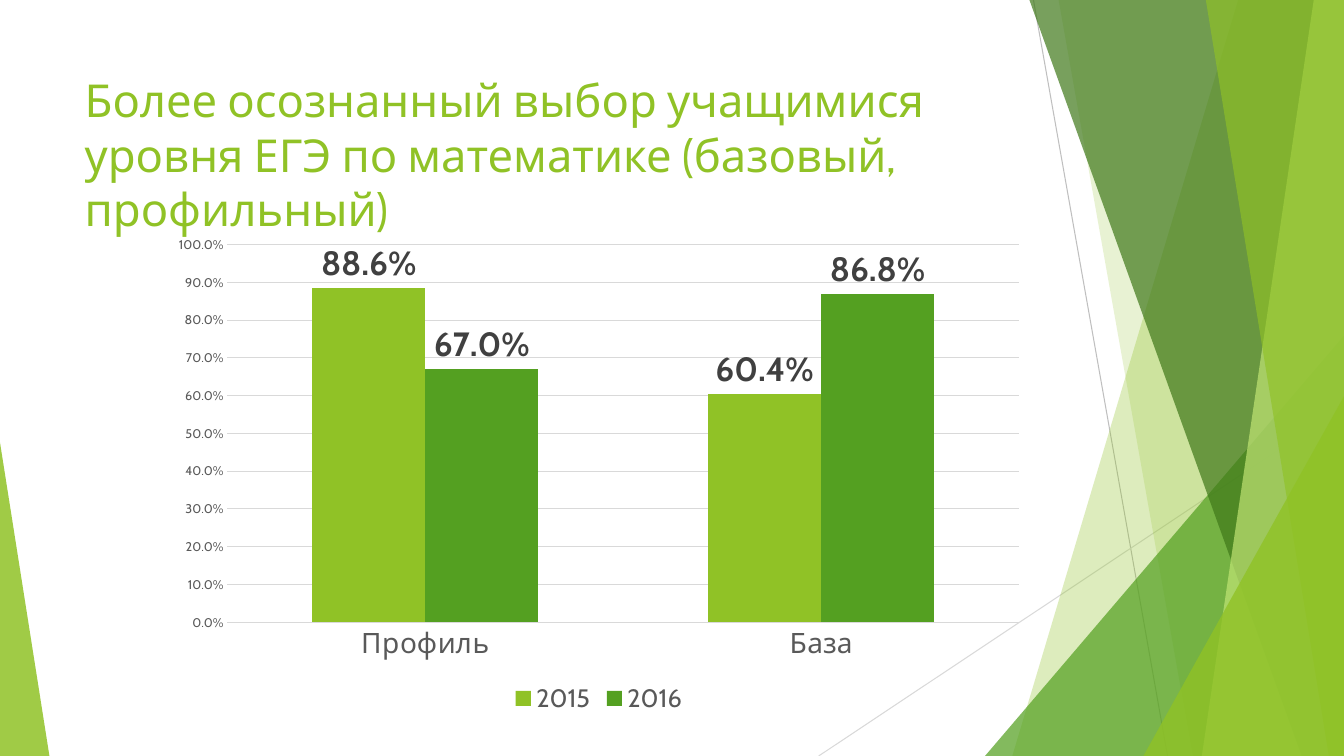
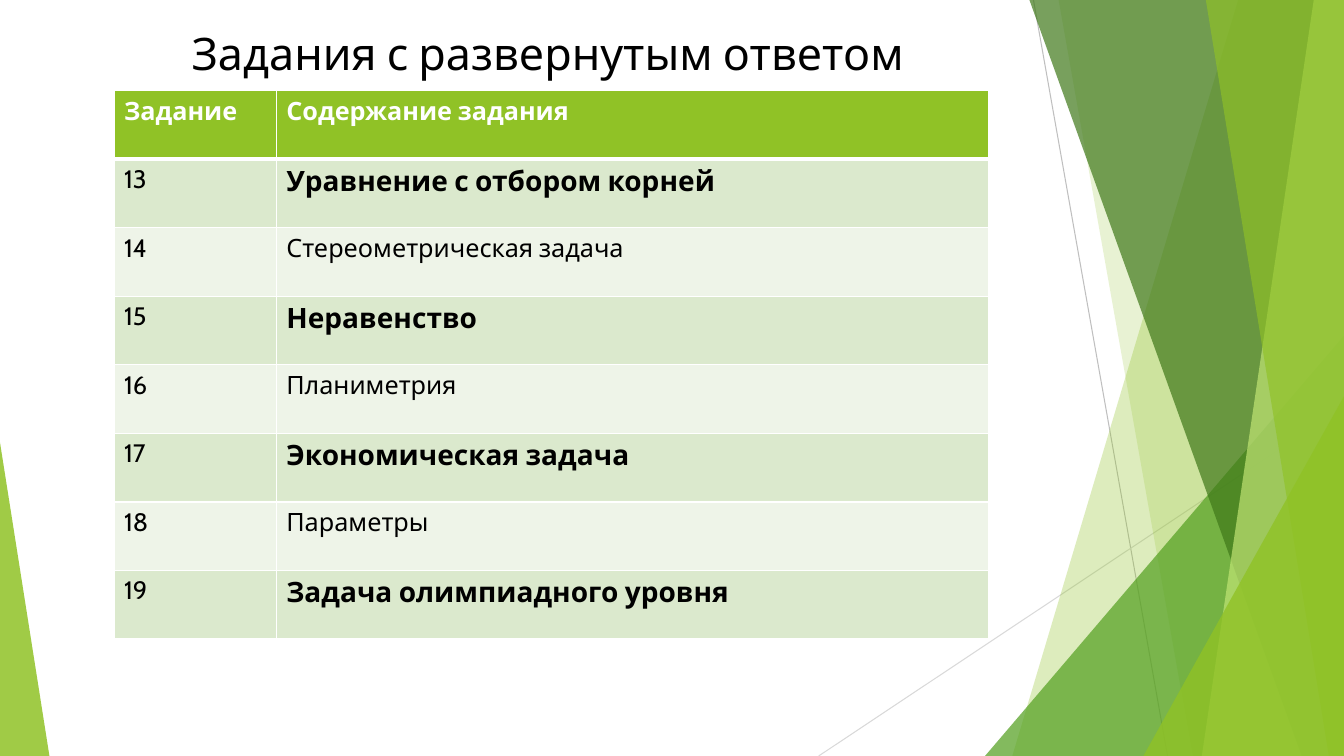
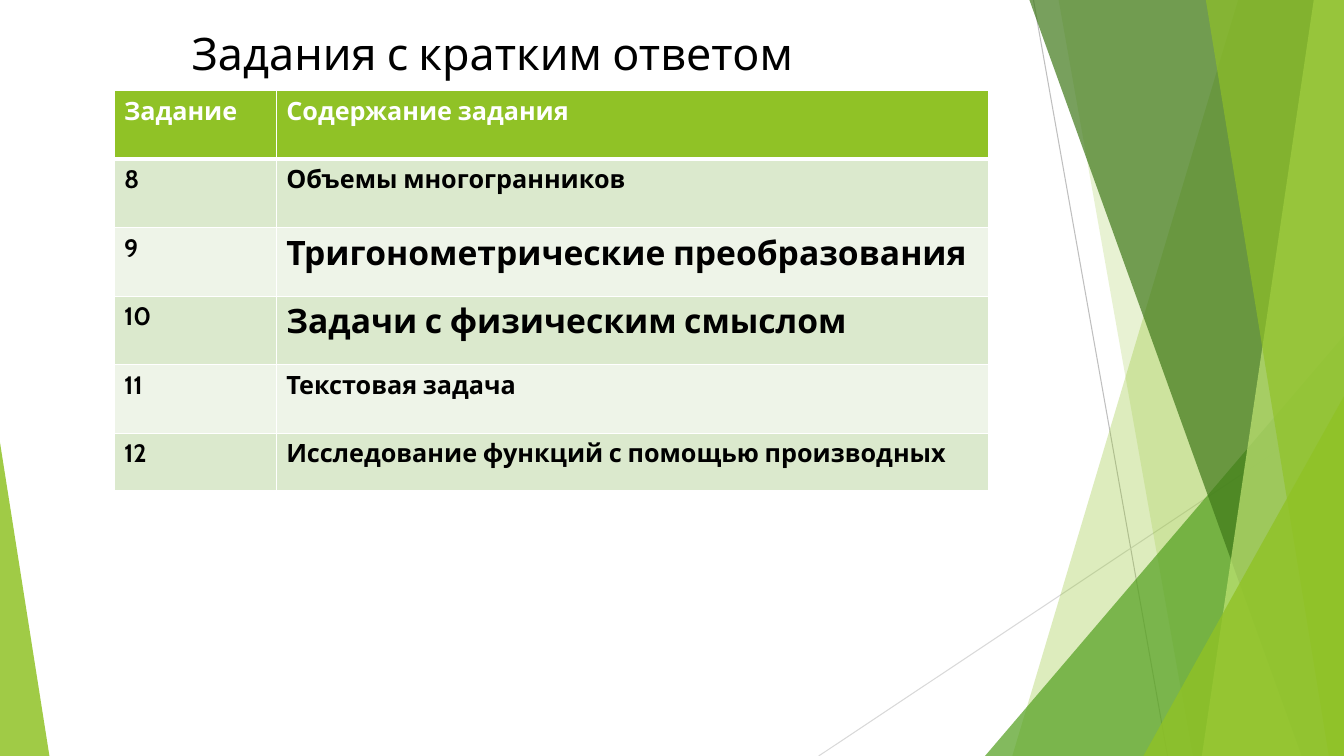
"""Build three slides on the results and tasks of the mathematics exam."""
from lxml.etree import SubElement
from pptx import Presentation
from pptx.chart.data import CategoryChartData
from pptx.dml.color import RGBColor
from pptx.enum.chart import XL_CHART_TYPE, XL_LABEL_POSITION, XL_LEGEND_POSITION, XL_TICK_MARK
from pptx.enum.shapes import MSO_CONNECTOR, MSO_SHAPE
from pptx.enum.text import MSO_ANCHOR, MSO_AUTO_SIZE, PP_ALIGN
from pptx.oxml.ns import qn
from pptx.util import Inches, Pt

LIME = RGBColor(0x90, 0xC2, 0x26)
GREEN = RGBColor(0x54, 0xA0, 0x21)
DARK_GREEN = RGBColor(0x3F, 0x78, 0x19)
PALE_LIME = RGBColor(0xC0, 0xE4, 0x74)
ROW_DARK = RGBColor(0xDB, 0xE9, 0xCD)
ROW_LIGHT = RGBColor(0xEE, 0xF4, 0xE8)
WHITE = RGBColor(0xFF, 0xFF, 0xFF)
BLACK = RGBColor(0, 0, 0)
LABEL_GRAY = RGBColor(0x40, 0x40, 0x40)
AXIS_GRAY = RGBColor(0x59, 0x59, 0x59)
LINE_GRAY = RGBColor(0xBF, 0xBF, 0xBF)
GRID_GRAY = RGBColor(0xD9, 0xD9, 0xD9)
FONT = "Cabin"
WIDTH, HEIGHT = 13.33, 7.5

BACKDROP_LINES = [
    (10.25, 0, 11.58, HEIGHT, LINE_GRAY),
    (WIDTH, 4.03, 8.12, HEIGHT, GRID_GRAY),
]
BACKDROP_SHAPES = [
    ("band", (12.28, 10.04), LIME, 30),
    ("band", (10.5, 11.83), LIME, 20),
    ("triangle", (9.77, WIDTH, 3.33, 1), GREEN, 72),
    ("band", (10.21, 12.91), DARK_GREEN, 70),
    ("band", (13.03, 11.92), PALE_LIME, 70),
    ("band", (11.96, 13.18), LIME, 65),
    ("triangle", (11.34, WIDTH, 3.93, 1), LIME, 80),
    ("triangle", (0, 0.49, 4.39, 0), LIME, 85),
]

CHART_TITLE = "Более осознанный выбор учащимися уровня ЕГЭ по математике (базовый, профильный)"
LEVELS = ["Профиль", "База"]
SHARES = [("2015", (0.886, 0.604), LIME), ("2016", (0.67, 0.868), GREEN)]

TABLE_HEADER = ("Задание", "Содержание задания")
COLUMN_WIDTHS = (1.61, 7.07)
ROW_HEIGHT = 0.68
TABLE_SLIDES = [
    {
        "title": "Задания с развернутым ответом",
        "bold_numbers": False,
        "last_row": ROW_HEIGHT,
        "tasks": [
            ("13", "Уравнение с отбором корней", 20, True),
            ("14", "Стереометрическая задача", 18, False),
            ("15", "Неравенство", 20, True),
            ("16", "Планиметрия", 18, False),
            ("17", "Экономическая задача", 20, True),
            ("18", "Параметры", 18, False),
            ("19", "Задача олимпиадного уровня", 20, True),
        ],
    },
    {
        "title": "Задания с кратким ответом",
        "bold_numbers": True,
        "last_row": 0.57,
        "tasks": [
            ("8", "Объемы многогранников", 18, True),
            ("9", "Тригонометрические преобразования", 24, True),
            ("10", "Задачи с физическим смыслом", 24, True),
            ("11", "Текстовая задача", 18, True),
            ("12", "Исследование функций с помощью производных", 18, True),
        ],
    },
]


def style_font(font, size, color, bold=False):
    font.name, font.size, font.bold = FONT, Pt(size), bold
    font.color.rgb = color


def add_band(shapes, top_x, bottom_x):
    builder = shapes.build_freeform(Inches(top_x), 0)
    corners = [(WIDTH, 0), (WIDTH, HEIGHT), (bottom_x, HEIGHT)]
    builder.add_line_segments([(Inches(x), Inches(y)) for x, y in corners])
    return builder.convert_to_shape()


def add_triangle(shapes, left, right, top, apex):
    triangle = shapes.add_shape(MSO_SHAPE.ISOSCELES_TRIANGLE, Inches(left), Inches(top),
                                Inches(right - left), Inches(HEIGHT - top))
    triangle.adjustments[0] = apex
    return triangle


def add_backdrop(slide, master):
    """Draw the backdrop as one group and place it on the master."""
    group = slide.shapes.add_group_shape()
    for *ends, color in BACKDROP_LINES:
        connector = group.shapes.add_connector(MSO_CONNECTOR.STRAIGHT, *map(Inches, ends))
        connector.line.color.rgb = color
        connector.line.width = Pt(0.75)
        SubElement(connector.element.spPr, qn("a:effectLst"))
    makers = {"band": add_band, "triangle": add_triangle}
    for kind, geometry, color, opacity in BACKDROP_SHAPES:
        shape = makers[kind](group.shapes, *geometry)
        shape.shadow.inherit = False
        shape.line.fill.background()
        shape.fill.solid()
        shape.fill.fore_color.rgb = color
        color_element = shape.element.spPr.find(".//" + qn("a:srgbClr"))
        SubElement(color_element, qn("a:alpha"), val=str(opacity * 1000))
    master.shapes.element.insert(2, group.element)


def add_title(slide, text, box, size, color):
    title = slide.shapes.title
    title.left, title.top, title.width, title.height = map(Inches, box)
    text_frame = title.text_frame
    text_frame.text = text
    text_frame.word_wrap = True
    text_frame.auto_size = MSO_AUTO_SIZE.NONE
    text_frame.vertical_anchor = MSO_ANCHOR.TOP
    paragraph = text_frame.paragraphs[0]
    paragraph.alignment = PP_ALIGN.LEFT
    style_font(paragraph.runs[0].font, size, color)


def add_share_chart(slide):
    chart_data = CategoryChartData(number_format="0.0%")
    chart_data.categories = LEVELS
    for name, values, _ in SHARES:
        chart_data.add_series(name, values)
    chart = slide.shapes.add_chart(XL_CHART_TYPE.COLUMN_CLUSTERED, Inches(1.6), Inches(2.25),
                                   Inches(8.68), Inches(4.88), chart_data).chart
    style_font(chart.font, 10, BLACK)
    chart.has_title = False
    chart.has_legend = True
    chart.legend.position = XL_LEGEND_POSITION.BOTTOM
    chart.legend.include_in_layout = False
    style_font(chart.legend.font, 18, AXIS_GRAY)

    for axis, size in ((chart.category_axis, 20), (chart.value_axis, 9)):
        axis.major_tick_mark = axis.minor_tick_mark = XL_TICK_MARK.NONE
        axis.format.line.fill.background()
        style_font(axis.tick_labels.font, size, AXIS_GRAY)
    value_axis = chart.value_axis
    value_axis.minimum_scale, value_axis.maximum_scale, value_axis.major_unit = 0, 1, 0.1
    value_axis.tick_labels.number_format = "0.0%"
    value_axis.tick_labels.number_format_is_linked = False
    value_axis.major_gridlines.format.line.color.rgb = GRID_GRAY
    value_axis.major_gridlines.format.line.width = Pt(0.75)

    plot = chart.plots[0]
    plot.gap_width, plot.overlap, plot.vary_by_categories = 150, 0, False
    for series, (_, _, color) in zip(plot.series, SHARES):
        series.format.fill.solid()
        series.format.fill.fore_color.rgb = color
        labels = series.data_labels
        labels.show_value = True
        labels.number_format, labels.number_format_is_linked = "0.0%", False
        labels.position = XL_LABEL_POSITION.OUTSIDE_END
        style_font(labels.font, 24, LABEL_GRAY, True)


def add_cell_borders(cell, top, bottom):
    properties = cell._tc.get_or_add_tcPr()
    for side, width in (("L", 1), ("R", 1), ("T", top), ("B", bottom)):
        border = SubElement(properties, qn(f"a:ln{side}"), w=str(Pt(width)))
        fill = SubElement(border, qn("a:solidFill"))
        SubElement(fill, qn("a:srgbClr"), val=str(WHITE))


def add_task_table(slide, tasks, bold_numbers, last_row):
    heights = [ROW_HEIGHT] * len(tasks) + [last_row]
    table = slide.shapes.add_table(len(heights), len(COLUMN_WIDTHS), Inches(1.13), Inches(0.9),
                                   Inches(sum(COLUMN_WIDTHS)), Inches(sum(heights))).table
    for column, width in zip(table.columns, COLUMN_WIDTHS):
        column.width = Inches(width)
    rows = [[(text, 18, True) for text in TABLE_HEADER]]
    rows += [[(number, 18, bold_numbers), (text, size, bold)] for number, text, size, bold in tasks]
    for index, (height, row) in enumerate(zip(heights, rows)):
        table.rows[index].height = Inches(height)
        fill_color = LIME if index == 0 else (ROW_LIGHT, ROW_DARK)[index % 2]
        for column_index, (text, size, bold) in enumerate(row):
            cell = table.cell(index, column_index)
            add_cell_borders(cell, 3 if index == 1 else 1, 3 if index == 0 else 1)
            cell.fill.solid()
            cell.fill.fore_color.rgb = fill_color
            cell.text_frame.text = text
            font = cell.text_frame.paragraphs[0].runs[0].font
            style_font(font, size, BLACK if index else WHITE, bold)


def main():
    presentation = Presentation()
    presentation.slide_width, presentation.slide_height = Inches(WIDTH), Inches(HEIGHT)
    layout = presentation.slide_layouts[5]

    slide = presentation.slides.add_slide(layout)
    add_backdrop(slide, presentation.slide_master)
    add_title(slide, CHART_TITLE, (0.74, 0.67, 9.4, 1.44), 32.4, LIME)
    add_share_chart(slide)

    for content in TABLE_SLIDES:
        slide = presentation.slides.add_slide(layout)
        add_title(slide, content["title"], (1.8, 0.2, 8.64, 0.64), 32, BLACK)
        add_task_table(slide, content["tasks"], content["bold_numbers"], content["last_row"])

    presentation.save("out.pptx")


if __name__ == "__main__":
    main()
